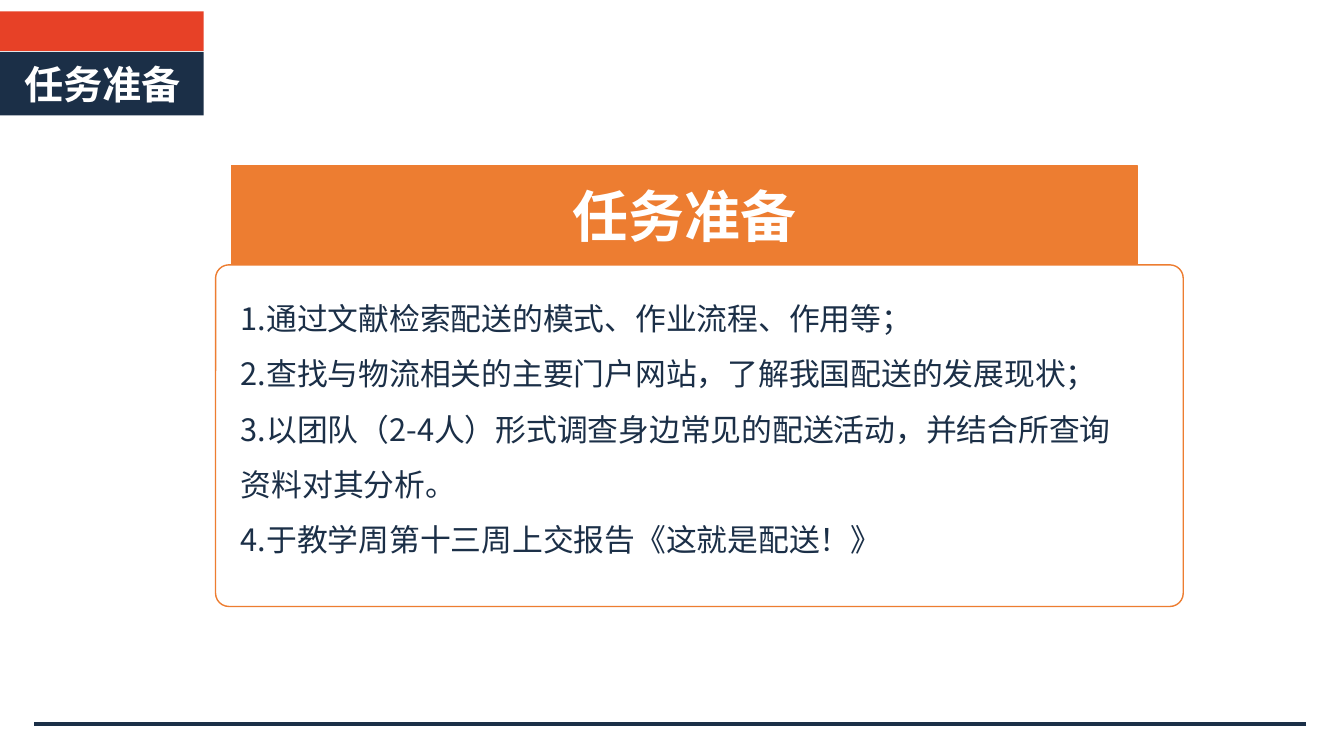
from lxml import etree
from pptx import Presentation
from pptx.dml.color import RGBColor
from pptx.enum.shapes import MSO_CONNECTOR, MSO_SHAPE
from pptx.enum.text import MSO_ANCHOR, MSO_AUTO_SIZE, PP_ALIGN
from pptx.oxml.ns import qn
from pptx.util import Pt

RECT, ROUND = MSO_SHAPE.RECTANGLE, MSO_SHAPE.ROUNDED_RECTANGLE
STRAIGHT = MSO_CONNECTOR.STRAIGHT
TOP, MIDDLE = MSO_ANCHOR.TOP, MSO_ANCHOR.MIDDLE
LEFT, CENTER = PP_ALIGN.LEFT, PP_ALIGN.CENTER
NO_FIT = MSO_AUTO_SIZE.NONE

NAVY, RED, ORANGE, WHITE = "1B2F47", "E74127", "ED7D31", "FFFFFF"
TASKS = [
    "1.通过文献检索配送的模式、作业流程、作用等；",
    "2.查找与物流相关的主要门户网站，了解我国配送的发展现状；",
    "3.以团队（2-4人）形式调查身边常见的配送活动，并结合所查询资料对其分析。",
    "4.于教学周第十三周上交报告《这就是配送！》",
]


def rgb(value):
    return RGBColor.from_string(value)


class Deck:
    font = "Noto Sans CJK SC"

    def __init__(self, slide):
        self.slide = slide

    def shape(self, kind, box, fill, line=None, width=1, radius=0):
        sp = self.slide.shapes.add_shape(kind, *map(Pt, box))
        sp.shadow.inherit = False
        sp.fill.solid()
        sp.fill.fore_color.rgb = rgb(fill)
        if line:
            sp.line.color.rgb = rgb(line)
            sp.line.width = Pt(width)
        else:
            sp.line.fill.background()
        if kind == ROUND:
            sp.adjustments[0] = radius
        return sp

    def rule(self, start, end, color, width):
        line = self.slide.shapes.add_connector(STRAIGHT, *map(Pt, start + end))
        line.line.color.rgb = rgb(color)
        line.line.width = Pt(width)
        etree.SubElement(line.element.spPr, qn("a:effectLst"))

    def text(self, sp, lines, size, color, bold=False, align=LEFT, anchor=TOP, spacing=1):
        tf = sp.text_frame
        tf.text = "\n".join(lines)
        tf.word_wrap = True
        tf.auto_size = NO_FIT
        tf.vertical_anchor = anchor
        for p in tf.paragraphs:
            p.alignment = align
            p.line_spacing = spacing
            p.space_before = Pt(0)
            for r in p.runs:
                r.font.size = Pt(size)
                r.font.bold = bold
                r.font.color.rgb = rgb(color)
                r.font.name = self.font
                ea = etree.SubElement(r.font._element, qn("a:ea"))
                ea.set("typeface", self.font)

    def placeholder(self, sp, box, lines, size, color, **style):
        """Move a placeholder to the front and fill it with unbulleted text."""
        sp.left, sp.top, sp.width, sp.height = map(Pt, box)
        sp.element.getparent().append(sp.element)
        self.text(sp, lines, size, color, **style)
        for p in sp.text_frame.paragraphs:
            pPr = p._p.get_or_add_pPr()
            pPr.set("marL", "0")
            pPr.set("indent", "0")
            etree.SubElement(pPr, qn("a:buNone"))


def main():
    prs = Presentation()
    prs.slide_width, prs.slide_height = Pt(960), Pt(540)
    slide = prs.slides.add_slide(prs.slide_layouts[1])
    title, body = slide.placeholders
    deck = Deck(slide)

    deck.shape(RECT, (0, 37, 145.5, 45.5), NAVY)
    deck.shape(RECT, (0, 8.2, 145.5, 28.3), RED)
    deck.placeholder(title, (10, 39.5, 135.5, 43), ["任务准备"], 28, WHITE, bold=True)

    deck.rule((933, 517), (24, 517), NAVY, 3)

    deck.shape(ROUND, (154, 189.2, 691.2, 244), WHITE, ORANGE, 1, 0.039)
    deck.placeholder(body, (164.8, 197.2, 655.2, 207.4), TASKS, 22, NAVY, spacing=1.5)

    banner = deck.shape(RECT, (165.4, 118.3, 646.8, 70.6), ORANGE, ORANGE, 0.75)
    deck.text(banner, ["任务准备"], 40, WHITE, bold=True, align=CENTER, anchor=MIDDLE)

    prs.save("out.pptx")


if __name__ == "__main__":
    main()
